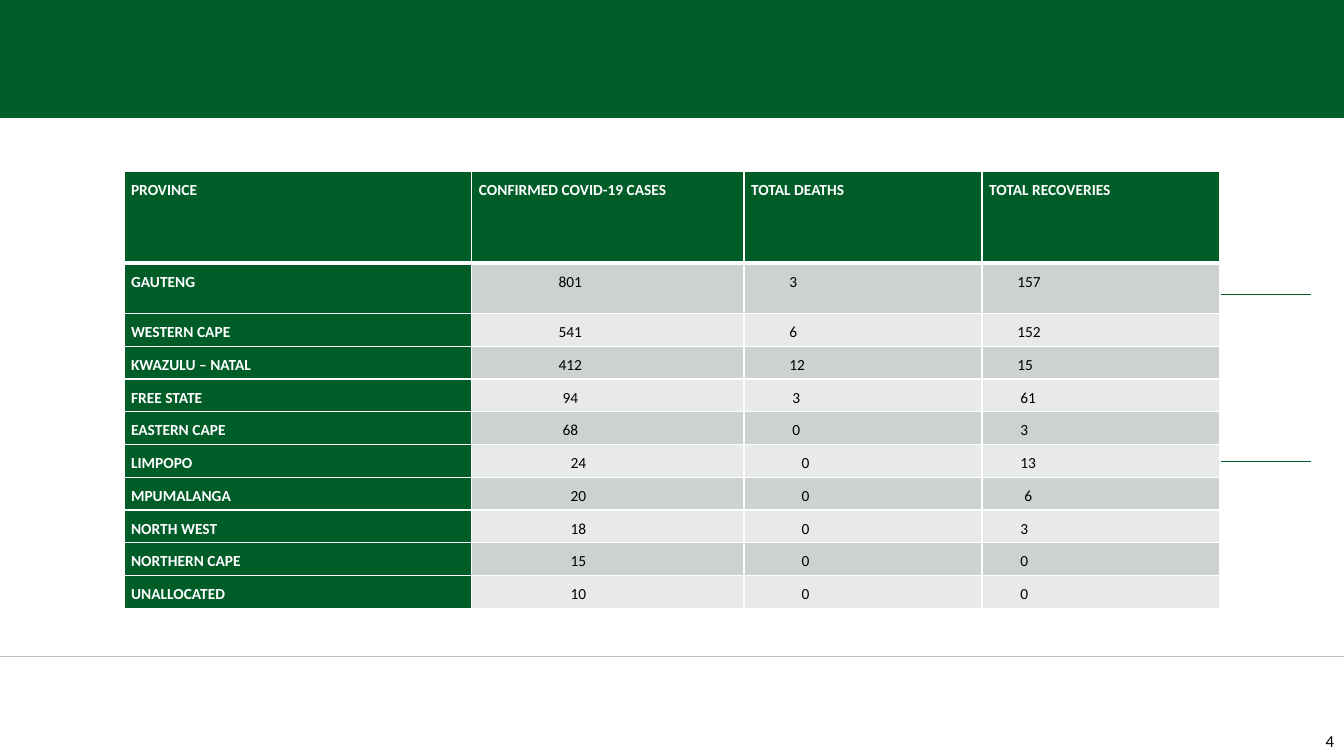
from lxml.etree import SubElement
from pptx import Presentation
from pptx.dml.color import RGBColor
from pptx.enum.shapes import MSO_CONNECTOR, MSO_SHAPE
from pptx.enum.text import MSO_ANCHOR, PP_ALIGN
from pptx.oxml.ns import qn
from pptx.util import Inches, Pt

COLORS = {"green": "005D28", "gray": "BFBFBF", "white": "FFFFFF",
          "black": "000000", "dark_band": "CCD2CD", "light_band": "E7EAE8"}
COLUMN_WIDTHS = [3.45, 2.7, 2.36, 2.36]
ROW_HEIGHTS = [0.91, 0.5] + [0.325] * 9
HEADERS = ["PROVINCE", "CONFIRMED COVID-19 CASES", "TOTAL DEATHS", "TOTAL RECOVERIES"]
PROVINCES = [
    ("GAUTENG", 801, 3, 157),
    ("WESTERN CAPE", 541, 6, 152),
    ("KWAZULU – NATAL", 412, 12, 15),
    ("FREE STATE", 94, 3, 61),
    ("EASTERN CAPE", 68, 0, 3),
    ("LIMPOPO", 24, 0, 13),
    ("MPUMALANGA", 20, 0, 6),
    ("NORTH WEST", 18, 0, 3),
    ("NORTHERN CAPE", 15, 0, 0),
    ("UNALLOCATED", 10, 0, 0),
]
INDENTS = ([(0, 0.79, 0.38, 0.28)] * 3 + [(0, 0.83, 0.41, 0.31)] * 2
           + [(0, 0.91, 0.5, 0.31)] * 5)
INDENTS[6] = (0, 0.91, 0.5, 0.35)


class SlideBuilder:
    """Draws styled elements on the current slide."""

    def __init__(self, slide, font_name="Calibri"):
        self.slide = slide
        self.font_name = font_name

    def color(self, name):
        return RGBColor.from_string(COLORS[name])

    def style(self, paragraph, size, color, bold=False):
        font = paragraph.font
        font.name, font.size, font.bold = self.font_name, Pt(size), bold
        font.color.rgb = self.color(color)

    def bar(self, left, top, width, height, color):
        shape = self.slide.shapes.add_shape(
            MSO_SHAPE.RECTANGLE, Inches(left), Inches(top), Inches(width), Inches(height))
        shape.shadow.inherit = False
        shape.fill.solid()
        shape.fill.fore_color.rgb = self.color(color)
        shape.line.fill.background()

    def line(self, left, right, top, color):
        connector = self.slide.shapes.add_connector(
            MSO_CONNECTOR.STRAIGHT, Inches(left), Inches(top), Inches(right), Inches(top))
        connector.line.color.rgb = self.color(color)
        connector.line.width = Pt(0.75)
        SubElement(connector._element.spPr, qn("a:effectLst"))

    def text(self, left, top, width, height, content, size):
        shape = self.slide.shapes.add_textbox(
            Inches(left), Inches(top), Inches(width), Inches(height))
        frame = shape.text_frame
        frame.word_wrap = True
        frame.vertical_anchor = MSO_ANCHOR.BOTTOM
        frame.margin_top = frame.margin_bottom = Inches(0.05)
        paragraph = frame.paragraphs[0]
        paragraph.text = content
        paragraph.alignment = PP_ALIGN.RIGHT
        self.style(paragraph, size, "black")

    def border(self, cell, side, width):
        line = SubElement(cell._tc.get_or_add_tcPr(), qn(f"a:ln{side}"), w=str(Pt(width)))
        fill = SubElement(line, qn("a:solidFill"))
        SubElement(fill, qn("a:srgbClr"), val=COLORS["white"])

    def cell(self, cell, content, fill, indent, heading, top_border, bottom_border):
        cell.margin_left = cell.margin_right = Inches(0.07)
        cell.margin_top = cell.margin_bottom = 0
        for side, width in (("L", 1), ("R", 1), ("T", top_border), ("B", bottom_border)):
            self.border(cell, side, width)
        cell.fill.solid()
        cell.fill.fore_color.rgb = self.color(fill)
        paragraph = cell.text_frame.paragraphs[0]
        paragraph.text = str(content)
        paragraph.line_spacing = 1.5
        if indent:
            paragraph._p.get_or_add_pPr().set("marL", str(Inches(indent)))
        self.style(paragraph, 11, "white" if heading else "black", heading)

    def table(self, left, top, rows, indents):
        table = self.slide.shapes.add_table(
            len(rows), len(COLUMN_WIDTHS), Inches(left), Inches(top),
            Inches(sum(COLUMN_WIDTHS)), Inches(sum(ROW_HEIGHTS))).table
        for column, width in zip(table.columns, COLUMN_WIDTHS):
            column.width = Inches(width)
        for row, height in zip(table.rows, ROW_HEIGHTS):
            row.height = Inches(height)
        for row_index, (row, row_indents) in enumerate(zip(rows, indents)):
            band = "dark_band" if row_index % 2 else "light_band"
            for column_index, (content, indent) in enumerate(zip(row, row_indents)):
                heading = row_index == 0 or column_index == 0
                self.cell(table.cell(row_index, column_index), content,
                          "green" if heading else band, indent, heading,
                          3 if row_index == 1 else 1, 3 if row_index == 0 else 1)


def main():
    presentation = Presentation()
    presentation.slide_width, presentation.slide_height = Inches(13.33), Inches(7.5)
    builder = SlideBuilder(presentation.slides.add_slide(presentation.slide_layouts[6]))
    builder.bar(0, 0, 13.33, 1.17, "green")
    builder.line(0, 13.33, 6.51, "gray")
    for top in (2.92, 4.58):
        builder.line(3.67, 13, top, "green")
    builder.text(12.86, 7.22, 0.47, 0.28, "4", 12)
    builder.table(1.23, 1.7, [HEADERS] + PROVINCES, [(0, 0, 0, 0)] + INDENTS)
    presentation.save("out.pptx")


if __name__ == "__main__":
    main()
